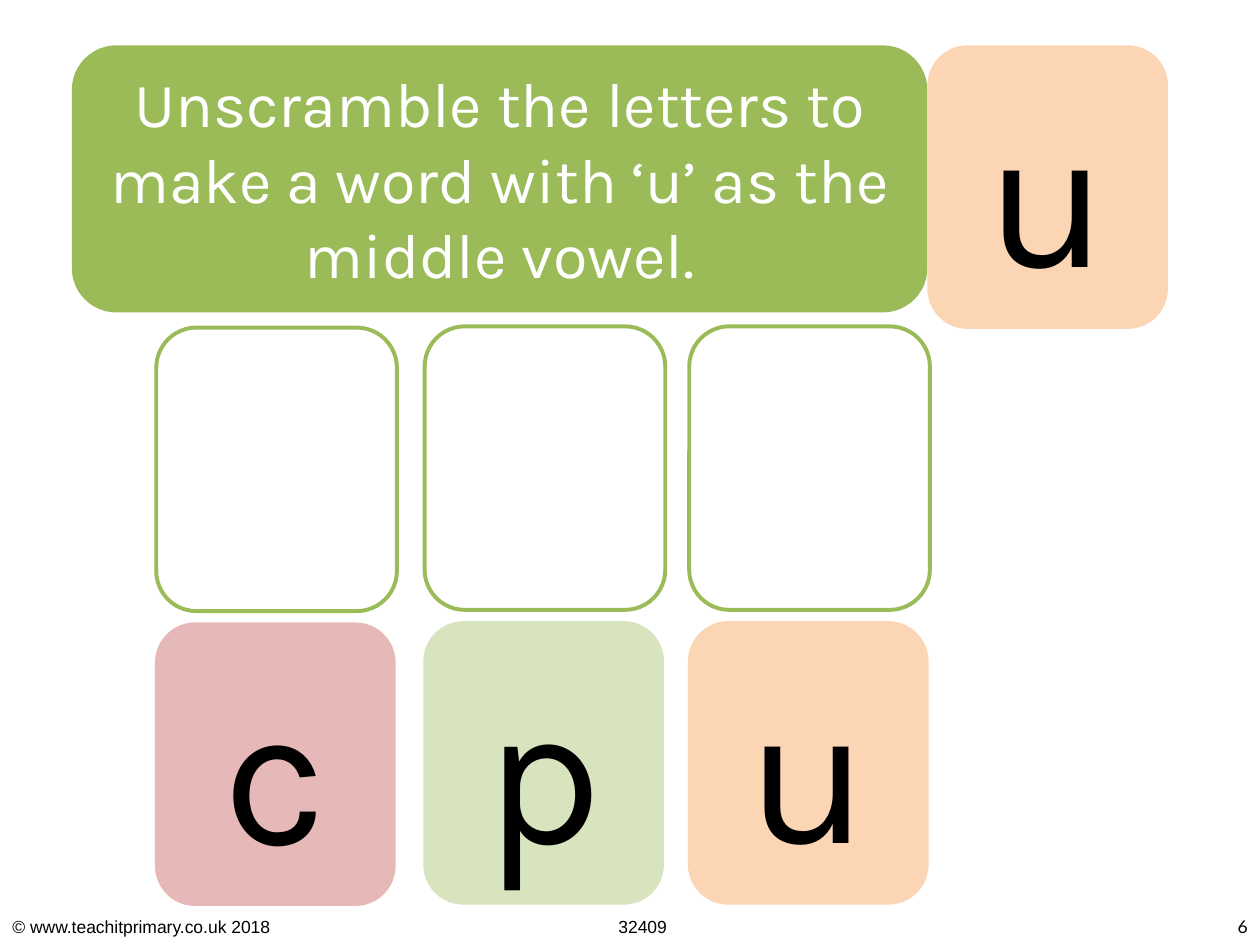
from dataclasses import dataclass

from pptx import Presentation
from pptx.dml.color import RGBColor
from pptx.enum.shapes import MSO_SHAPE
from pptx.enum.text import MSO_ANCHOR, PP_ALIGN
from pptx.util import Inches, Pt


@dataclass(frozen=True)
class Theme:
    green: str = "9BBB59"
    pale_green: str = "D7E4BD"
    peach: str = "FCD5B5"
    pink: str = "E6B9B8"
    white: str = "FFFFFF"
    black: str = "000000"
    letter_size: int = 115
    instruction_size: int = 36
    footer_size: int = 10
    outline_width: float = 2.25


theme = Theme()
CARD_WIDTH, CARD_HEIGHT = 1.91, 2.25


def add_card(left, top, width, height, fill, outline=None):
    card = slide.shapes.add_shape(
        MSO_SHAPE.ROUNDED_RECTANGLE,
        Inches(left), Inches(top), Inches(width), Inches(height))
    card.shadow.inherit = False
    card.fill.solid()
    card.fill.fore_color.rgb = RGBColor.from_string(fill)
    if outline:
        card.line.color.rgb = RGBColor.from_string(outline)
        card.line.width = Pt(theme.outline_width)
    else:
        card.line.fill.background()
    return card


def write(box, text, size, font, color, align, anchor):
    frame = box.text_frame
    frame.word_wrap = True
    frame.vertical_anchor = anchor
    frame.text = text
    paragraph = frame.paragraphs[0]
    paragraph.alignment = align
    run = paragraph.runs[0]
    run.font.size = Pt(size)
    run.font.name = font
    run.font.color.rgb = RGBColor.from_string(color)


presentation = Presentation()
presentation.slide_width = Inches(10)
presentation.slide_height = Inches(7.5)
slide = presentation.slides.add_slide(presentation.slide_layouts[6])

# Footer: copyright, resource number, page number
for left, text, font, align in (
    (0, "© www.teachitprimary.co.uk 2018", "Arial", PP_ALIGN.LEFT),
    (3.19, "32409", "Arial", PP_ALIGN.CENTER),
    (6.18, "6", "Lato", PP_ALIGN.RIGHT),
):
    footer = slide.shapes.add_textbox(
        Inches(left), Inches(7.22), Inches(3.82), Inches(0.27))
    write(footer, text, theme.footer_size, font, theme.black, align,
          MSO_ANCHOR.TOP)

# Instruction
instruction = add_card(0.57, 0.36, 6.79, 2.12, theme.green)
write(instruction,
      "Unscramble the letters to make a word with ‘u’ as the middle vowel.",
      theme.instruction_size, "Karla", theme.white, PP_ALIGN.CENTER,
      MSO_ANCHOR.TOP)

# Letter cards: the vowel beside the instruction, then the scrambled letters
for letter, left, top, fill in (
    ("u", 7.36, 0.36, theme.peach),
    ("p", 3.36, 4.93, theme.pale_green),
    ("u", 5.46, 4.93, theme.peach),
    ("c", 1.23, 4.94, theme.pink),
):
    letter_card = add_card(left, top, CARD_WIDTH, CARD_HEIGHT, fill)
    write(letter_card, letter, theme.letter_size, "Karla", theme.black,
          PP_ALIGN.CENTER, MSO_ANCHOR.MIDDLE)

# Empty answer cards
for left, top in ((3.37, 2.59), (5.47, 2.59), (1.24, 2.6)):
    add_card(left, top, CARD_WIDTH, CARD_HEIGHT, theme.white, theme.green)

presentation.save("out.pptx")
